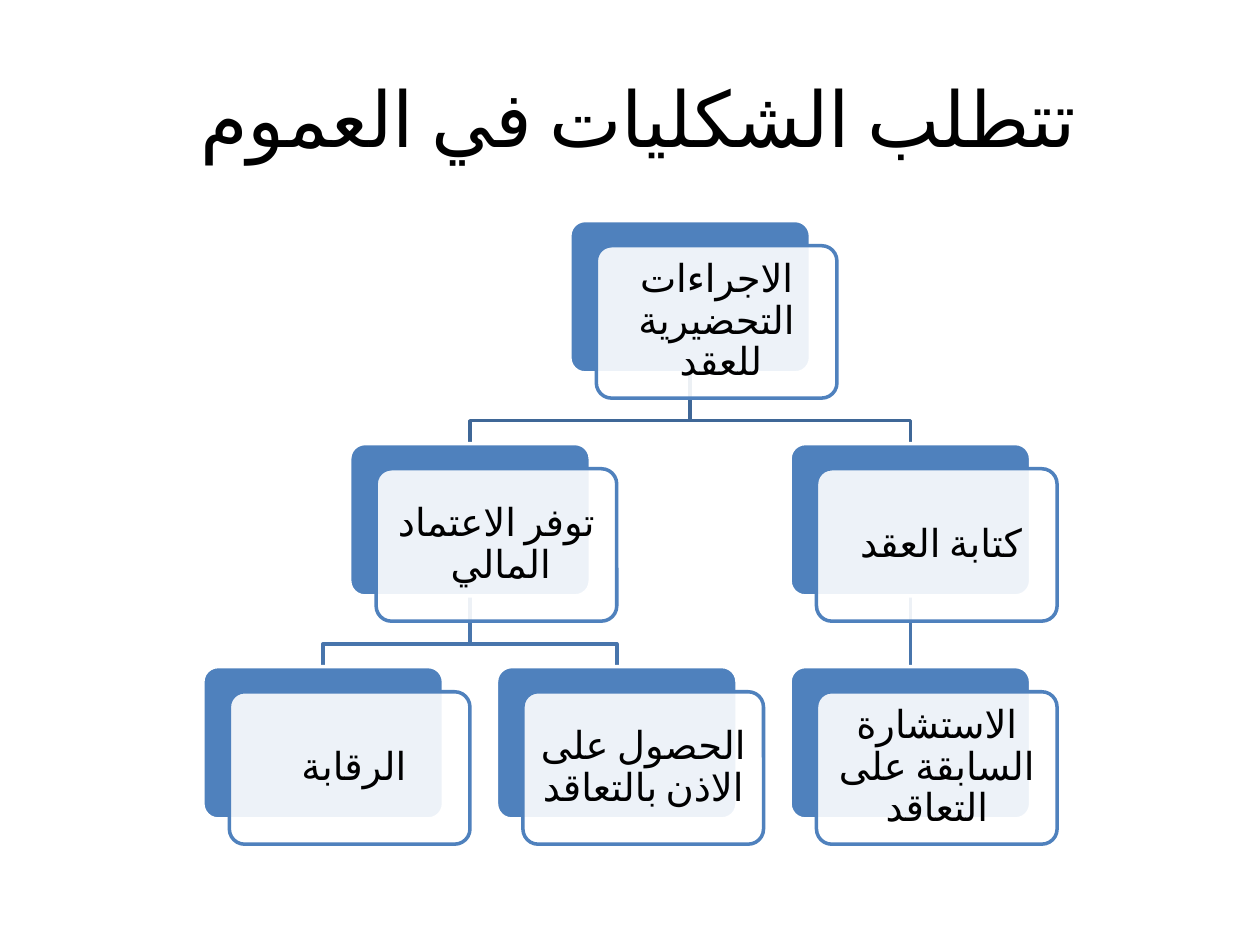
import pptx
import pptx.util
import pptx.dml.color
import pptx.enum.lang
import pptx.enum.shapes
import pptx.enum.text
import pptx.oxml
import pptx.oxml.ns

Inches = pptx.util.Inches

TITLE = "تتطلب الشكليات في العموم "
TREE = ("الاجراءات التحضيرية للعقد ", [
    ("توفر الاعتماد المالي ", [
        ("الرقابة ", []),
        ("الحصول على الاذن بالتعاقد ", []),
    ]),
    ("كتابة العقد ", [
        ("الاستشارة السابقة على التعاقد", []),
    ]),
])

THEME = {
    "font": "Calibri",
    "title_size": 44,
    "card_size": 22,
    "text": "000000",
    "accent": "4F81BD",
    "paper": "FFFFFF",
    "links": ["3F6797", "4875AC"],
    "line": 2,
    "card_opacity": 90,
}

TITLE_BOX = (0.5, 0.3, 9, 1.25)
CARD_WIDTH, CARD_HEIGHT = 1.91, 1.21
FIRST_LEFT, FIRST_TOP = 1.61, 1.75
COLUMN_STEP, ROW_STEP = 2.33, 1.77
FRONT_SHIFT_X, FRONT_SHIFT_Y = 0.21, 0.2
TEXT_INSET = 0.035
ELBOW_DROP = 0.38


def color(value):
    return pptx.dml.color.RGBColor.from_string(value)


def apply_format(target, values):
    for name, value in values.items():
        setattr(target, name, value)


def place(node, level, cards, links, leaves):
    text, children = node
    lefts = [place(child, level + 1, cards, links, leaves) for child in children]
    if lefts:
        left = (lefts[0] + lefts[-1]) / 2
    else:
        left = FIRST_LEFT + len(leaves) * COLUMN_STEP
        leaves.append(text)
    top = FIRST_TOP + level * ROW_STEP
    cards.append((text, left, top))
    center, bottom = left + CARD_WIDTH / 2, top + CARD_HEIGHT
    for child_left in lefts:
        links.append((level, center, bottom, child_left + CARD_WIDTH / 2, top + ROW_STEP))
    return left


def add_text(slide, text, box, size, margins, spacing):
    shape = slide.shapes.add_textbox(*map(Inches, box))
    frame = shape.text_frame
    apply_format(frame, {
        "word_wrap": True,
        "vertical_anchor": pptx.enum.text.MSO_ANCHOR.MIDDLE,
        **margins,
    })
    paragraph = frame.paragraphs[0]
    apply_format(paragraph, {
        "alignment": pptx.enum.text.PP_ALIGN.CENTER,
        "line_spacing": spacing,
    })
    paragraph._p.get_or_add_pPr().set("rtl", "1")
    run = paragraph.add_run()
    run.text = text
    apply_format(run.font, {
        "size": pptx.util.Pt(size),
        "name": THEME["font"],
        "language_id": pptx.enum.lang.MSO_LANGUAGE_ID.ARABIC_ALGERIA,
    })
    run.font.color.rgb = color(THEME["text"])
    complex_font = pptx.oxml.parse_xml(
        f'<a:cs {pptx.oxml.ns.nsdecls("a")} typeface="{THEME["font"]}"/>')
    run._r.get_or_add_rPr().append(complex_font)


def add_link(slide, level, start_x, start_y, end_x, end_y):
    elbow_y = start_y + ELBOW_DROP
    builder = slide.shapes.build_freeform(Inches(start_x), Inches(start_y))
    points = [(start_x, elbow_y), (end_x, elbow_y), (end_x, end_y)]
    if abs(start_x - end_x) < 0.01:
        points = [(end_x, end_y)]
    builder.add_line_segments([(Inches(x), Inches(y)) for x, y in points], close=False)
    shape = builder.convert_to_shape()
    shape.shadow.inherit = False
    shape.fill.background()
    shape.line.color.rgb = color(THEME["links"][level])
    shape.line.width = pptx.util.Pt(THEME["line"])


def add_panel(slide, left, top, fill, line, opacity=100):
    shape = slide.shapes.add_shape(
        pptx.enum.shapes.MSO_SHAPE.ROUNDED_RECTANGLE,
        *map(Inches, (left, top, CARD_WIDTH, CARD_HEIGHT)))
    shape.adjustments[0] = 0.1
    shape.shadow.inherit = False
    shape.fill.solid()
    shape.fill.fore_color.rgb = color(fill)
    shape.line.color.rgb = color(line)
    shape.line.width = pptx.util.Pt(THEME["line"])
    if opacity < 100:
        fill_color = shape._element.spPr.find(pptx.oxml.ns.qn("a:solidFill"))[0]
        fill_color.append(pptx.oxml.parse_xml(
            f'<a:alpha {pptx.oxml.ns.nsdecls("a")} val="{opacity * 1000}"/>'))


def add_card(slide, text, left, top):
    add_panel(slide, left, top, THEME["accent"], THEME["paper"])
    front_left, front_top = left + FRONT_SHIFT_X, top + FRONT_SHIFT_Y
    add_panel(slide, front_left, front_top, THEME["paper"], THEME["accent"],
              THEME["card_opacity"])
    box = (front_left + TEXT_INSET, front_top + TEXT_INSET,
           CARD_WIDTH - 2 * TEXT_INSET, CARD_HEIGHT - 2 * TEXT_INSET)
    margins = {f"margin_{side}": Inches(0.09)
               for side in ("left", "top", "right", "bottom")}
    add_text(slide, text, box, THEME["card_size"], margins, 0.9)


def main():
    presentation = pptx.Presentation()
    apply_format(presentation, {"slide_width": Inches(10), "slide_height": Inches(7.5)})
    slide = presentation.slides.add_slide(presentation.slide_layouts[6])
    add_text(slide, TITLE, TITLE_BOX, THEME["title_size"], {}, 1.0)
    cards, links = [], []
    place(TREE, 0, cards, links, [])
    for link in links:
        add_link(slide, *link)
    for card in cards:
        add_card(slide, *card)
    presentation.save("out.pptx")


if __name__ == "__main__":
    main()
